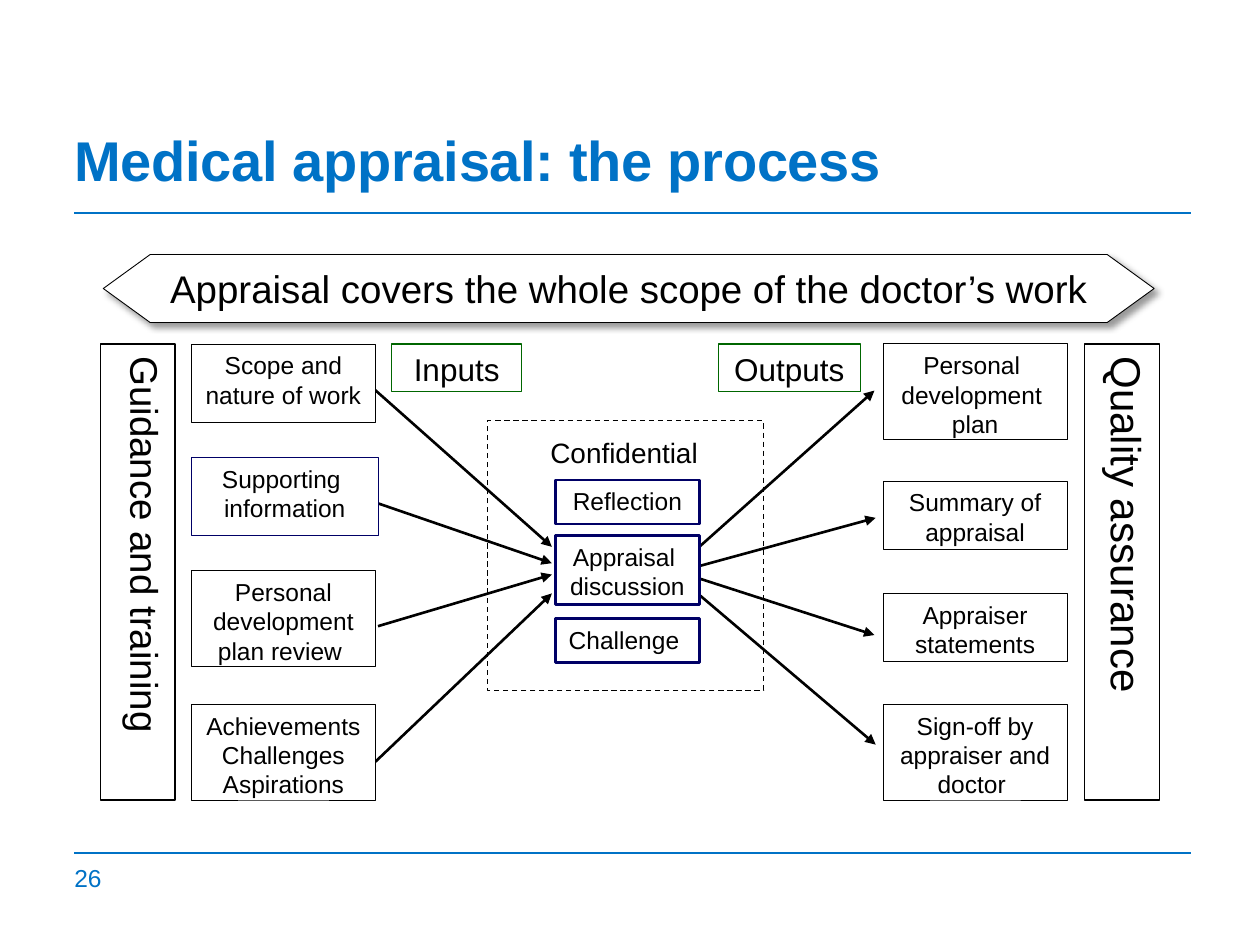
from dataclasses import dataclass
from typing import Optional

from lxml import etree
from pptx import Presentation
from pptx.dml.color import RGBColor
from pptx.enum.dml import MSO_LINE
from pptx.enum.shapes import MSO_CONNECTOR, MSO_SHAPE
from pptx.enum.text import MSO_ANCHOR, PP_ALIGN
from pptx.oxml import parse_xml
from pptx.util import Inches, Pt

BLUE = RGBColor(0x00, 0x72, 0xC6)
NAVY = RGBColor(0x00, 0x00, 0x66)
GREEN = RGBColor(0x00, 0x66, 0x00)
BLACK = RGBColor(0x00, 0x00, 0x00)
WHITE = RGBColor(0xFF, 0xFF, 0xFF)

RECTANGLE = MSO_SHAPE.RECTANGLE
DOUBLE_ARROW = MSO_SHAPE.LEFT_RIGHT_ARROW
STRAIGHT = MSO_CONNECTOR.STRAIGHT
DASH = MSO_LINE.DASH
TOP, MIDDLE, BOTTOM = MSO_ANCHOR.TOP, MSO_ANCHOR.MIDDLE, MSO_ANCHOR.BOTTOM
LEFT, CENTER = PP_ALIGN.LEFT, PP_ALIGN.CENTER

FONT = "Arial"
DRAWING = "http://schemas.openxmlformats.org/drawingml/2006/main"
FLOW_TOP = 2.73
INPUT_LEFT, CORE_LEFT, OUTPUT_LEFT = 1.52, 4.41, 7.01
STEP_WIDTH, CORE_WIDTH = 1.46, 1.14


@dataclass
class Box:
    text: str
    left: float
    top: float
    width: float
    height: float
    size: float = 14
    line: RGBColor = BLACK
    weight: float = 0.5
    fill: Optional[RGBColor] = None


@dataclass
class Arrow:
    x1: float
    y1: float
    x2: float
    y2: float


def format_text(frame, size, color=BLACK, align=CENTER, anchor=TOP, bold=False):
    frame.word_wrap = True
    frame.vertical_anchor = anchor
    for para in frame.paragraphs:
        para.alignment = align
        for span in para.runs:
            span.font.name = FONT
            span.font.size = Pt(size)
            span.font.bold = bold
            span.font.color.rgb = color


def clear_margins(frame):
    frame.margin_left = frame.margin_right = 0
    frame.margin_top = frame.margin_bottom = 0


def draw_box(page, box: Box, kind=RECTANGLE, align=CENTER, anchor=TOP):
    shape = page.shapes.add_shape(kind, Inches(box.left), Inches(box.top),
                                  Inches(box.width), Inches(box.height))
    shape.shadow.inherit = False
    if box.fill is None:
        shape.fill.background()
    else:
        shape.fill.solid()
        shape.fill.fore_color.rgb = box.fill
    shape.line.color.rgb = box.line
    shape.line.width = Pt(box.weight)
    shape.text_frame.text = box.text
    format_text(shape.text_frame, box.size, align=align, anchor=anchor)
    return shape


def draw_line(page, arrow: Arrow, color: RGBColor, weight: float, head: bool):
    line = page.shapes.add_connector(STRAIGHT, Inches(arrow.x1), Inches(arrow.y1),
                                     Inches(arrow.x2), Inches(arrow.y2))
    line.line.color.rgb = color
    line.line.width = Pt(weight)
    if head:
        outline = line.element.spPr.find(f"{{{DRAWING}}}ln")
        etree.SubElement(outline, f"{{{DRAWING}}}tailEnd", type="triangle")
    etree.SubElement(line.element.spPr, f"{{{DRAWING}}}effectLst")


def draw_text(page, text, left, top, width, height):
    label = page.shapes.add_textbox(Inches(left), Inches(top), Inches(width), Inches(height))
    label.text_frame.text = text
    return label.text_frame


def add_shadow(shape):
    effects = shape.element.spPr.find(f"{{{DRAWING}}}effectLst")
    effects.append(parse_xml(
        f'<a:outerShdw xmlns:a="{DRAWING}" blurRad="{Pt(4)}" dist="{Pt(3)}" '
        'dir="2700000" algn="tl" rotWithShape="0"><a:srgbClr val="000000">'
        '<a:alpha val="40000"/></a:srgbClr></a:outerShdw>'))


INPUTS = [
    Box("Scope and nature of work", INPUT_LEFT, FLOW_TOP, STEP_WIDTH, 0.62, fill=WHITE),
    Box("Supporting \ninformation", INPUT_LEFT, 3.63, 1.48, 0.62, line=NAVY, fill=WHITE),
    Box("Personal development plan review ", INPUT_LEFT, 4.53, STEP_WIDTH, 0.76, fill=WHITE),
    Box("Achievements Challenges Aspirations", INPUT_LEFT, 5.59, STEP_WIDTH, 0.76, fill=WHITE),
]
CORE = [
    Box("Reflection", CORE_LEFT, 3.81, CORE_WIDTH, 0.35, line=NAVY, weight=1.5),
    Box("Appraisal \ndiscussion ", CORE_LEFT, 4.25, CORE_WIDTH, 0.55,
        line=NAVY, weight=1.5, fill=WHITE),
    Box("Challenge ", CORE_LEFT, 4.91, CORE_WIDTH, 0.35, line=NAVY, weight=1.5),
]
OUTPUTS = [
    Box("Personal \ndevelopment \nplan", OUTPUT_LEFT, FLOW_TOP, STEP_WIDTH, 0.76),
    Box("Summary of appraisal", OUTPUT_LEFT, 3.82, STEP_WIDTH, 0.54),
    Box("Appraiser statements", OUTPUT_LEFT, 4.71, STEP_WIDTH, 0.54),
    Box("Sign-off by appraiser and doctor ", OUTPUT_LEFT, 5.59, STEP_WIDTH, 0.76),
]
HEADINGS = [
    Box("Inputs", 3.11, FLOW_TOP, 1.03, 0.38, 18, GREEN, 0.75),
    Box("Outputs", 5.7, FLOW_TOP, 1.13, 0.38, 18, GREEN, 0.75),
]
PILLARS = [
    Box("Guidance and training", 0.8, FLOW_TOP, 0.59, 3.62, 22, weight=0.75),
    Box("Quality assurance", 8.61, FLOW_TOP, 0.59, 3.62, 24, weight=0.75),
]
ARROWS = [
    Arrow(2.87, 3, 4.38, 4.34),
    Arrow(2.87, 3.95, 4.38, 4.47),
    Arrow(3, 4.97, 4.38, 4.56),
    Arrow(2.87, 6.15, 4.38, 4.71),
    Arrow(5.55, 4.34, 6.94, 3.1),
    Arrow(5.45, 4.52, 6.95, 4.11),
    Arrow(5.36, 4.53, 6.94, 5.04),
    Arrow(5.36, 4.56, 6.95, 5.91),
]


def main():
    deck = Presentation()
    deck.slide_width, deck.slide_height = Inches(10), Inches(7.5)
    page = deck.slides.add_slide(deck.slide_layouts[5])

    # Title, rules and page number
    title = page.shapes.title
    title.left, title.top = Inches(0.59), Inches(0.56)
    title.width, title.height = Inches(8.82), Inches(0.98)
    title.text_frame.text = "Medical appraisal: the process"
    clear_margins(title.text_frame)
    format_text(title.text_frame, 32, BLUE, LEFT, BOTTOM, bold=True)
    title.text_frame.paragraphs[0].line_spacing = 0.9
    title.element.xpath(".//a:rPr")[0].set("spc", "-20")
    for y in (1.69, 6.77):
        draw_line(page, Arrow(0.59, y, 9.45, y), BLUE, 1.25, head=False)
    number = draw_text(page, "26", 0.59, 6.85, 8.86, 0.4)
    clear_margins(number)
    format_text(number, 14, BLUE, LEFT)

    # Scope banner
    banner = draw_box(page, Box("Appraisal covers the whole scope of the doctor’s work",
                                0.82, 2.02, 8.34, 0.54, 22, fill=WHITE),
                      DOUBLE_ARROW, anchor=MIDDLE)
    banner.adjustments[0], banner.adjustments[1] = 1, 0.69
    add_shadow(banner)

    # Side pillars with vertical text
    for pillar in PILLARS:
        shape = draw_box(page, pillar, align=LEFT)
        shape.element.xpath(".//a:bodyPr")[0].set("vert", "eaVert")

    # Confidential area
    area = draw_box(page, Box("", 3.87, 3.34, 2.19, 2.14, weight=0.75))
    area.line.dash_style = DASH
    format_text(draw_text(page, "Confidential", 4.27, 3.41, 1.46, 0.37), 16, align=LEFT)

    # Flow: arrows beneath the boxes
    for arrow in ARROWS:
        draw_line(page, arrow, BLACK, 1.5, head=True)
    for box in HEADINGS + INPUTS + CORE + OUTPUTS:
        draw_box(page, box)

    deck.save("out.pptx")


if __name__ == "__main__":
    main()
